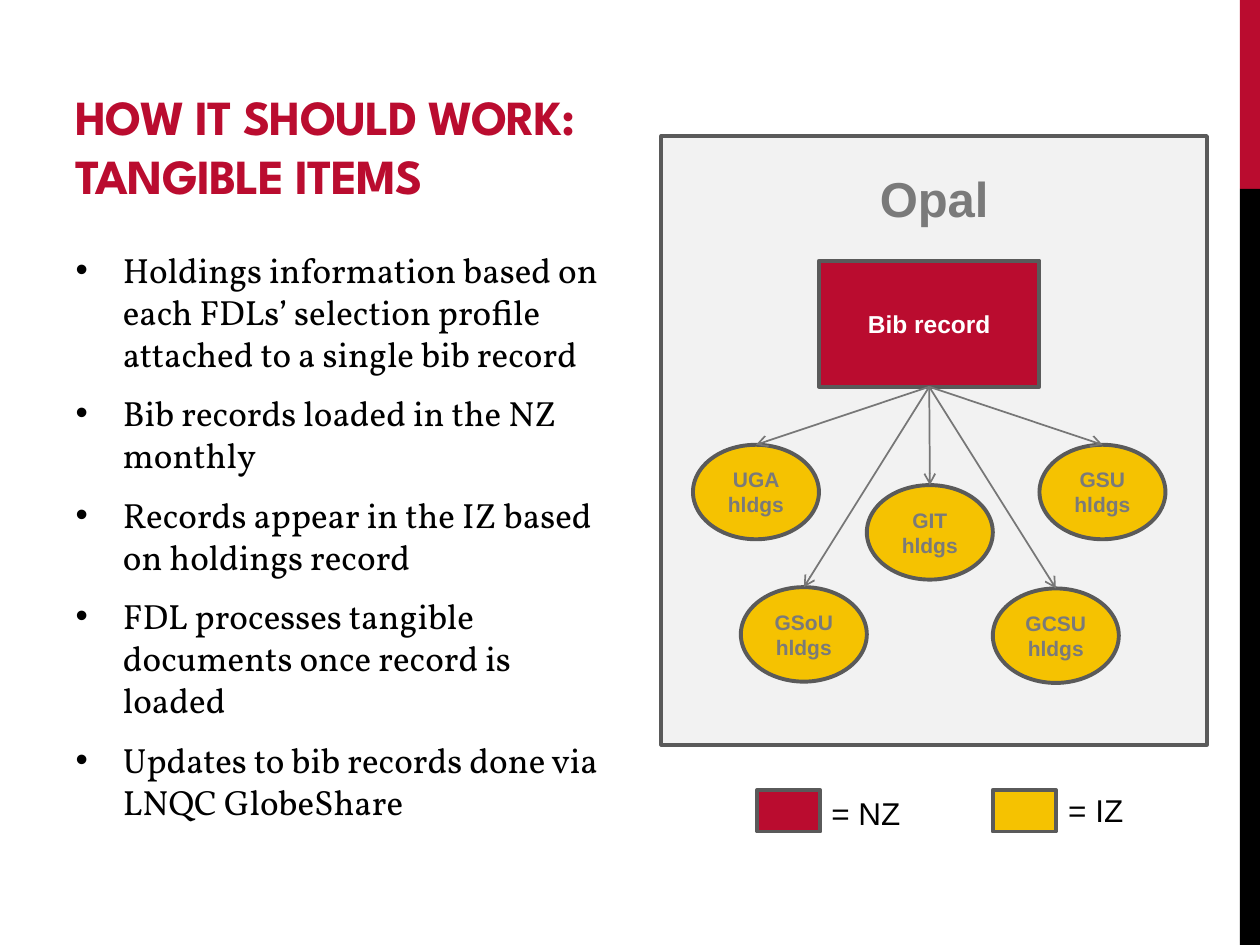
"""Build a slide on how tangible items are handled, with a holdings diagram."""
from lxml import etree
from pptx import Presentation
from pptx.dml.color import RGBColor
from pptx.enum.shapes import MSO_CONNECTOR as Connector, MSO_SHAPE as Shape
from pptx.enum.text import MSO_ANCHOR as Anchor, MSO_AUTO_SIZE as AutoSize, PP_ALIGN as Align
from pptx.oxml.ns import qn
from pptx.util import Inches, Pt

RED, GOLD, BLACK, WHITE = "BA0C2F", "F5C201", "000000", "FFFFFF"
PANEL, BORDER, GRAY, ARROW = "F2F2F2", "5A5A5A", "7A7A7A", "777777"


def write(shape, text, size, color, font="Arial", bold=False, align=Align.LEFT,
          anchor=Anchor.TOP, wrap=True, after=None):
    """Fill a shape with text, one paragraph for each line."""
    frame = shape.text_frame
    frame.text = text
    frame.auto_size = AutoSize.NONE
    frame.word_wrap = wrap
    frame.vertical_anchor = anchor
    for paragraph in frame.paragraphs:
        paragraph.alignment = align
        if after is not None:
            paragraph.space_after = Pt(after)
        for run in paragraph.runs:
            run.font.name = font
            run.font.size = Pt(size)
            run.font.bold = bold
            run.font.color.rgb = RGBColor.from_string(color)


def add_box(slide, kind, left, top, width, height, fill, border=BORDER):
    """Add a filled preset shape, with a border unless it is None."""
    shape = slide.shapes.add_shape(kind, Inches(left), Inches(top), Inches(width), Inches(height))
    shape.shadow.inherit = False
    shape.fill.solid()
    shape.fill.fore_color.rgb = RGBColor.from_string(fill)
    if border:
        shape.line.color.rgb = RGBColor.from_string(border)
        shape.line.width = Pt(2.25)
    else:
        shape.line.fill.background()
    return shape


presentation = Presentation()
presentation.slide_width, presentation.slide_height = Inches(10), Inches(7.5)
slide = presentation.slides.add_slide(presentation.slide_layouts[1])

title, body = slide.placeholders
title.left, title.top, title.width, title.height = map(Inches, (0.5, 0.17, 6.33, 1.5))
write(title, "HOW IT SHOULD WORK:\vTANGIBLE ITEMS", 28, RED, font="League Spartan",
      bold=True, anchor=Anchor.BOTTOM)
for run in title.text_frame.paragraphs[0].runs:
    run.font._element.set("spc", "-60")

points = [
    "Holdings information based on each FDLs’ selection profile attached to a single bib record",
    "Bib records loaded in the NZ monthly",
    "Records appear in the IZ based on holdings record",
    "FDL processes tangible documents once record is loaded",
    "Updates to bib records done via LNQC GlobeShare",
]
body.left, body.top, body.width, body.height = map(Inches, (0.5, 1.92, 4.42, 5.33))
write(body, "\n".join(points), 20, BLACK, font="Vollkorn", after=6)

add_box(slide, Shape.RECTANGLE, 9.84, 0, 0.16, 1.5, RED, border=None)
add_box(slide, Shape.RECTANGLE, 9.84, 1.5, 0.16, 6, BLACK, border=None)

panel = add_box(slide, Shape.RECTANGLE, 5.25, 1.08, 4.33, 4.83, PANEL)
write(panel, "Opal", 28, GRAY, bold=True, align=Align.CENTER)
panel.text_frame.margin_top = Inches(0.26)

bib_record = add_box(slide, Shape.RECTANGLE, 6.5, 2.07, 1.75, 1, RED)
write(bib_record, "Bib record", 14, WHITE, bold=True, align=Align.CENTER, anchor=Anchor.MIDDLE)

holdings = [
    ("UGA hldgs", 5.5, 3.53),
    ("GIT\nhldgs", 6.88, 3.85),
    ("GSoU hldgs", 5.88, 4.66),
    ("GCSU hldgs", 7.88, 4.67),
    ("GSU\nhldgs", 8.25, 3.53),
]
for label, left, top in holdings:
    oval = add_box(slide, Shape.OVAL, left, top, 1, 0.75, GOLD)
    write(oval, label, 12, GRAY, bold=True, align=Align.CENTER, anchor=Anchor.MIDDLE)
    arrow = slide.shapes.add_connector(Connector.STRAIGHT, 0, 0, 0, 0)
    arrow.begin_connect(bib_record, 2)
    arrow.end_connect(oval, 0)
    arrow.line.color.rgb = RGBColor.from_string(ARROW)
    arrow.line.width = Pt(1)
    etree.SubElement(arrow.line._get_or_add_ln(), qn("a:tailEnd"), type="arrow")
    etree.SubElement(arrow._element.spPr, qn("a:effectLst"))

legend = [("= NZ", RED, 6.01, 6.5, 6.25, 0.76), ("= IZ", GOLD, 7.88, 8.38, 6.23, 0.64)]
for label, color, swatch_left, left, top, width in legend:
    add_box(slide, Shape.RECTANGLE, swatch_left, 6.27, 0.5, 0.33, color)
    text_box = slide.shapes.add_textbox(Inches(left), Inches(top), Inches(width), Inches(0.4))
    write(text_box, label, 18, BLACK, wrap=False)

presentation.save("out.pptx")
